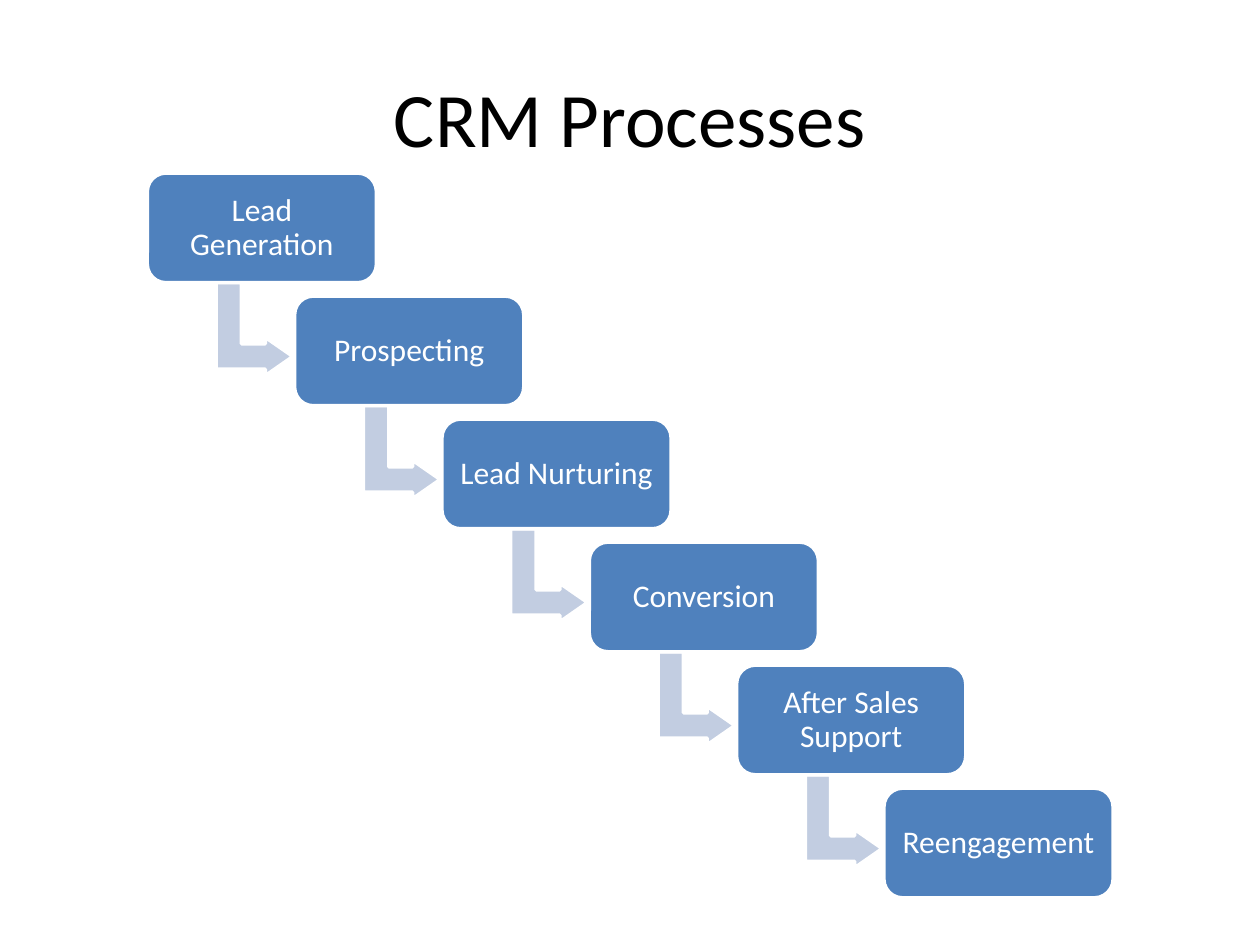
from dataclasses import dataclass

from pptx import Presentation
from pptx.dml.color import RGBColor
from pptx.enum.shapes import MSO_SHAPE
from pptx.enum.text import MSO_ANCHOR, PP_ALIGN
from pptx.util import Cm, Pt

ROUND = MSO_SHAPE.ROUNDED_RECTANGLE
BENT = MSO_SHAPE.BENT_UP_ARROW
MIDDLE = MSO_ANCHOR.MIDDLE
CENTER = PP_ALIGN.CENTER

FONT = "Calibri"
COLORS = {"box": "4F81BD", "arrow": "C2CDE1", "white": "FFFFFF", "title": "000000"}

# Staircase layout in cm
LEFT, TOP = 2.97, 3.49
STEP_X, STEP_Y = 2.97, 2.48
BOX_W, BOX_H = 4.62, 2.21
ARROW_X, ARROW_Y = 1.22, 2.37  # offset from the box corner
ARROW_W, ARROW_H = 1.88, 1.55
INSET = 0.18


@dataclass
class Step:
    text: str
    left: float
    top: float


def color(name: str) -> RGBColor:
    return RGBColor.from_string(COLORS[name])


def write(frame, text: str, size: int, tint: str):
    """Fill a frame with one centred run and return its paragraph."""
    frame.word_wrap = True
    frame.vertical_anchor = MIDDLE
    para = frame.paragraphs[0]
    para.alignment = CENTER
    run = para.add_run()
    run.text = text
    run.font.name = FONT
    run.font.size = Pt(size)
    run.font.color.rgb = color(tint)
    return para


def add_shape(slide, kind, left: float, top: float, width: float, height: float, fill: str):
    shape = slide.shapes.add_shape(kind, Cm(left), Cm(top), Cm(width), Cm(height))
    shape.shadow.inherit = False
    shape.fill.solid()
    shape.fill.fore_color.rgb = color(fill)
    shape.line.color.rgb = color("white")
    shape.line.width = Pt(2)
    return shape


def draw_arrow(slide, step: Step) -> None:
    arrow = add_shape(slide, BENT, step.left + ARROW_X, step.top + ARROW_Y,
                      ARROW_W, ARROW_H, "arrow")
    arrow.rotation = 90
    for i, value in enumerate((0.33, 0.25, 0.36)):
        arrow.adjustments[i] = value


def draw_box(slide, step: Step) -> None:
    box = add_shape(slide, ROUND, step.left, step.top, BOX_W, BOX_H, "box")
    box.adjustments[0] = 0.17
    frame = box.text_frame
    frame.margin_left = frame.margin_right = Cm(INSET)
    frame.margin_top = frame.margin_bottom = Cm(INSET)
    para = write(frame, step.text, 18, "white")
    para.line_spacing = 0.9
    para.space_after = Pt(6.3)


def main() -> None:
    deck = Presentation()
    deck.slide_width, deck.slide_height = Cm(25.4), Cm(19.05)
    slide = deck.slides.add_slide(deck.slide_layouts[5])

    # Title
    title = slide.shapes.title
    title.left, title.top = Cm(1.27), Cm(0.76)
    title.width, title.height = Cm(22.86), Cm(3.18)
    write(title.text_frame, "CRM Processes", 44, "title")

    # Steps, each with an arrow to the next one
    names = ("Lead Generation", "Prospecting", "Lead Nurturing",
             "Conversion", "After Sales Support", "Reengagement")
    steps = [Step(name, LEFT + i * STEP_X, TOP + i * STEP_Y)
             for i, name in enumerate(names)]
    for step in steps:
        if step is not steps[-1]:
            draw_arrow(slide, step)
        draw_box(slide, step)

    deck.save("out.pptx")


if __name__ == "__main__":
    main()
